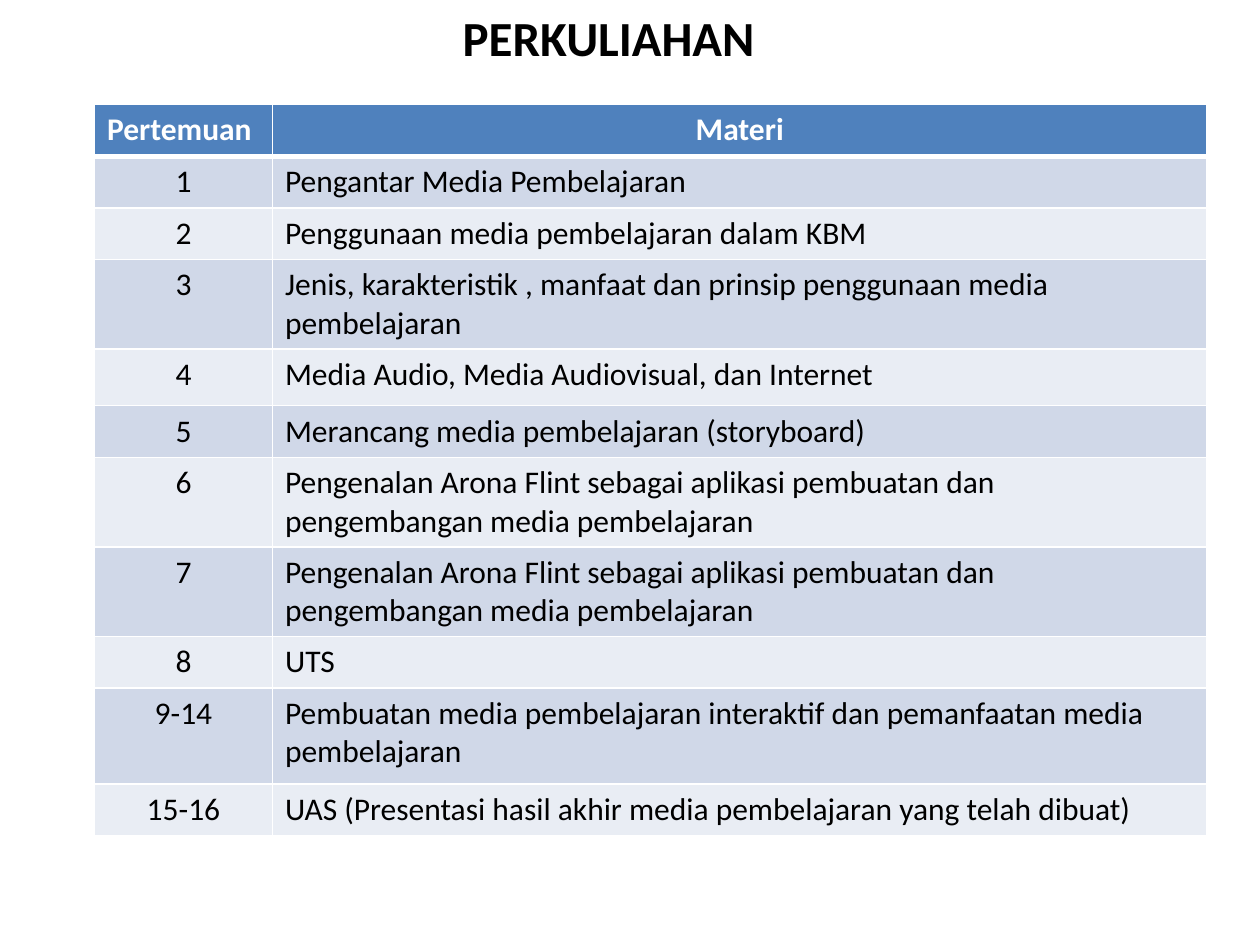
import dataclasses

import lxml.etree
import pptx
import pptx.dml.color
import pptx.enum.text
import pptx.oxml.ns
import pptx.util

ALIGN = pptx.enum.text.PP_ALIGN
ANCHOR = pptx.enum.text.MSO_ANCHOR


@dataclasses.dataclass(frozen=True)
class Theme:
    font: str = "Calibri"
    title_size: int = 28
    table_size: int = 18
    text: str = "000000"
    light: str = "FFFFFF"
    header: str = "4F81BD"
    bands: tuple = ("D0D8E8", "E9EDF4")
    rule: int = 1
    header_rule: int = 3


THEME = Theme()
WIDTH, HEIGHT = pptx.util.Inches(10), pptx.util.Inches(7.5)

# Regions as (left, top, width, height) in inches on the 10 x 7.5 page
TITLE_BOX = (0.33, -0.33, 9, 1.25)
TABLE_BOX = (0.75, 0.83, 8.83, 5.76)
COLUMN_SHARES = (0.16, 0.84)
ONE_LINE, TWO_LINES = 0.41, 0.71

HEADINGS = ("Pertemuan", "Materi")
FLASH_TOPIC = ("Pengenalan Arona Flint sebagai aplikasi pembuatan dan "
               "pengembangan media pembelajaran")
# Meeting, topic, row height
MEETINGS = (
    ("1", "Pengantar Media Pembelajaran", ONE_LINE),
    ("2", "Penggunaan media pembelajaran dalam KBM", ONE_LINE),
    ("3", "Jenis, karakteristik , manfaat dan prinsip penggunaan media "
          "pembelajaran", TWO_LINES),
    ("4", "Media Audio, Media Audiovisual, dan Internet", 0.45),
    ("5", "Merancang media pembelajaran (storyboard)", ONE_LINE),
    ("6", FLASH_TOPIC, TWO_LINES),
    ("7", FLASH_TOPIC, TWO_LINES),
    ("8", "UTS", ONE_LINE),
    ("9-14", "Pembuatan media pembelajaran interaktif dan pemanfaatan media "
             "pembelajaran", 0.76),
    ("15-16", "UAS (Presentasi hasil akhir media pembelajaran yang telah "
              "dibuat)", ONE_LINE),
)


def to_lengths(box):
    return [pptx.util.Inches(value) for value in box]


def write(frame, text, align, size, color, bold):
    para = frame.paragraphs[0]
    para.alignment = align
    span = para.add_run()
    span.text = text
    formats = {"name": THEME.font, "size": pptx.util.Pt(size), "bold": bold}
    for name, value in formats.items():
        setattr(span.font, name, value)
    span.font.color.rgb = pptx.dml.color.RGBColor.from_string(color)


def set_borders(cell, widths):
    """Draw light rules on a cell; widths maps edge letters to points."""
    properties = cell._tc.get_or_add_tcPr()
    qn = pptx.oxml.ns.qn
    for position, (edge, width) in enumerate(widths.items()):
        line = lxml.etree.Element(qn(f"a:ln{edge}"), w=str(pptx.util.Pt(width)))
        fill = lxml.etree.SubElement(line, qn("a:solidFill"))
        lxml.etree.SubElement(fill, qn("a:srgbClr"), val=THEME.light)
        properties.insert(position, line)


def place_title(page, box, text):
    title = page.shapes.title
    title.left, title.top, title.width, title.height = to_lengths(box)
    title.text_frame.vertical_anchor = ANCHOR.MIDDLE
    write(title.text_frame, text, ALIGN.CENTER, THEME.title_size, THEME.text, True)


def fill_row(table, index, texts, aligns, fill, color, bold):
    rule = THEME.rule
    top = THEME.header_rule if index == 1 else rule
    bottom = THEME.header_rule if index == 0 else rule
    for column, (text, align) in enumerate(zip(texts, aligns)):
        cell = table.cell(index, column)
        cell.fill.solid()
        cell.fill.fore_color.rgb = pptx.dml.color.RGBColor.from_string(fill)
        write(cell.text_frame, text, align, THEME.table_size, color, bold)
        set_borders(cell, {"L": rule, "R": rule, "T": top, "B": bottom})


def place_schedule(page, box):
    left, top, width, height = to_lengths(box)
    table = page.shapes.add_table(len(MEETINGS) + 1, len(HEADINGS),
                                  left, top, width, height).table
    for column, share in zip(table.columns, COLUMN_SHARES):
        column.width = round(width * share)
    table.rows[0].height = pptx.util.Inches(ONE_LINE)
    fill_row(table, 0, HEADINGS, (ALIGN.LEFT, ALIGN.CENTER),
             THEME.header, THEME.light, True)
    for index, (meeting, topic, row_height) in enumerate(MEETINGS, start=1):
        table.rows[index].height = pptx.util.Inches(row_height)
        band = THEME.bands[(index - 1) % len(THEME.bands)]
        fill_row(table, index, (meeting, topic), (ALIGN.CENTER, ALIGN.LEFT),
                 band, THEME.text, False)


def main():
    deck = pptx.Presentation()
    deck.slide_width, deck.slide_height = WIDTH, HEIGHT
    page = deck.slides.add_slide(deck.slide_layouts.get_by_name("Title Only"))
    place_title(page, TITLE_BOX, "PERKULIAHAN")
    place_schedule(page, TABLE_BOX)
    deck.save("out.pptx")


if __name__ == "__main__":
    main()
